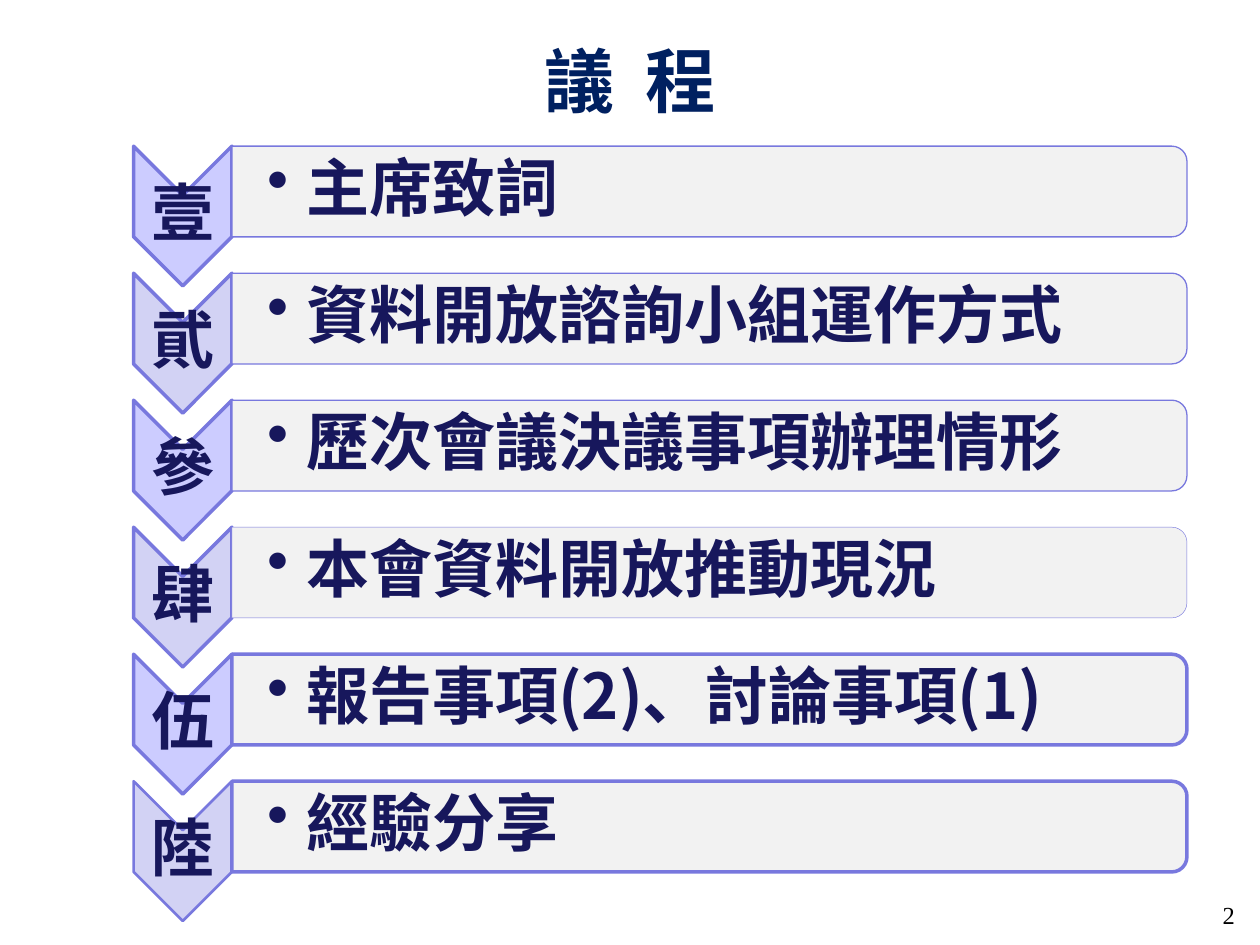
from lxml import etree
from pptx import Presentation
from pptx.dml.color import RGBColor
from pptx.enum.shapes import MSO_SHAPE
from pptx.enum.text import MSO_ANCHOR, PP_ALIGN
from pptx.oxml.ns import qn
from pptx.util import Inches, Pt

CHEVRON, BAR = MSO_SHAPE.CHEVRON, MSO_SHAPE.ROUND_2_SAME_RECTANGLE
TOP, MIDDLE = MSO_ANCHOR.TOP, MSO_ANCHOR.MIDDLE
LEFT, CENTER, RIGHT = PP_ALIGN.LEFT, PP_ALIGN.CENTER, PP_ALIGN.RIGHT

THEME = {
    "font": "Noto Sans CJK SC", "number_font": "Times New Roman",
    "title": "002060", "text": "17175C", "page_number": "000000",
    "line": "7878DE", "bar": "F2F2F2", "chevrons": ("CCCCFF", "D2D2F4"),
    "title_size": 40, "item_size": 36, "number_size": 14,
}

# Numeral, agenda item, chevron line width, bar line width
AGENDA = [
    ("壹", "主席致詞", 2, 0.75),
    ("貮", "資料開放諮詢小組運作方式", 2, 0.75),
    ("參", "歷次會議決議事項辦理情形", 2, 0.75),
    ("肆", "本會資料開放推動現況", 2, 0.25),
    ("伍", "報告事項(2)、討論事項(1)", 2, 2),
    ("陸", "經驗分享", 1.5, 2),
]

# Grid: a numeral column and an item column, six equal rows
NUMERAL_LEFT, NUMERAL_WIDTH = 1.06, 0.78
ITEM_LEFT, ITEM_WIDTH = NUMERAL_LEFT + NUMERAL_WIDTH, 7.58
FIRST_ROW, LAST_ROW = 1.16, 6.2
ROW_PITCH = (LAST_ROW - FIRST_ROW) / (len(AGENDA) - 1)
BAR_HEIGHT, CHEVRON_HEIGHT = 0.72, 1.11

deck = Presentation()
deck.slide_width, deck.slide_height = Inches(10), Inches(7.5)
page = deck.slides.add_slide(deck.slide_layouts[6])


def add_turned_shape(kind, left, top, width, height, fill, line_width):
    """Add a shape turned a quarter clockwise; the lengths are those seen on the page."""
    shape = page.shapes.add_shape(
        kind, Inches(left + (width - height) / 2), Inches(top + (height - width) / 2),
        Inches(height), Inches(width))
    shape.rotation = 90
    shape.shadow.inherit = False
    shape.fill.solid()
    shape.fill.fore_color.rgb = RGBColor.from_string(fill)
    shape.line.color.rgb = RGBColor.from_string(THEME["line"])
    shape.line.width = Pt(line_width)


def add_text(text, left, top, width, height, size, color, align, anchor=TOP,
             font=THEME["font"], bold=True, insets=(0.1, 0.05, 0.1, 0.05)):
    """Add a one-paragraph text box and return the paragraph."""
    box = page.shapes.add_textbox(Inches(left), Inches(top), Inches(width), Inches(height))
    frame = box.text_frame
    frame.word_wrap = True
    frame.vertical_anchor = anchor
    (frame.margin_left, frame.margin_top,
     frame.margin_right, frame.margin_bottom) = map(Inches, insets)
    frame.text = text
    para = frame.paragraphs[0]
    para.alignment = align
    span = para.runs[0]
    span.font.size, span.font.bold, span.font.name = Pt(size), bold, font
    span.font.color.rgb = RGBColor.from_string(color)
    etree.SubElement(span._r.get_or_add_rPr(), qn("a:ea"), typeface=font)
    return para


add_text("議  程", 0.5, 0.3, 9, 1.01, THEME["title_size"], THEME["title"], CENTER,
         insets=(0.1, 0, 0.1, 0))
add_text("2", 9.13, 7.09, 0.77, 0.24, THEME["number_size"], THEME["page_number"], RIGHT,
         font=THEME["number_font"], bold=False)

for row, (numeral, item, chevron_line, bar_line) in enumerate(AGENDA):
    top = FIRST_ROW + row * ROW_PITCH
    chevron_fill = THEME["chevrons"][row % 2]
    add_turned_shape(CHEVRON, NUMERAL_LEFT, top, NUMERAL_WIDTH, CHEVRON_HEIGHT,
                     chevron_fill, chevron_line)
    numeral_para = add_text(numeral, NUMERAL_LEFT, top + NUMERAL_WIDTH / 2, NUMERAL_WIDTH,
                            CHEVRON_HEIGHT - NUMERAL_WIDTH, THEME["item_size"],
                            THEME["text"], CENTER, MIDDLE, insets=(0.03,) * 4)
    add_turned_shape(BAR, ITEM_LEFT, top, ITEM_WIDTH, BAR_HEIGHT, THEME["bar"], bar_line)
    item_para = add_text(item, ITEM_LEFT, top + 0.03, ITEM_WIDTH - 0.04, BAR_HEIGHT - 0.07,
                         THEME["item_size"], THEME["text"], LEFT, MIDDLE,
                         insets=(0.28, 0.03, 0.03, 0.03))
    for para in (numeral_para, item_para):
        para.line_spacing = 0.9
    item_format = item_para._p.get_or_add_pPr()
    item_format.set("marL", str(Inches(0.31)))
    item_format.set("indent", str(-Inches(0.31)))
    etree.SubElement(item_format, qn("a:buChar"), char="•")

deck.save("out.pptx")
